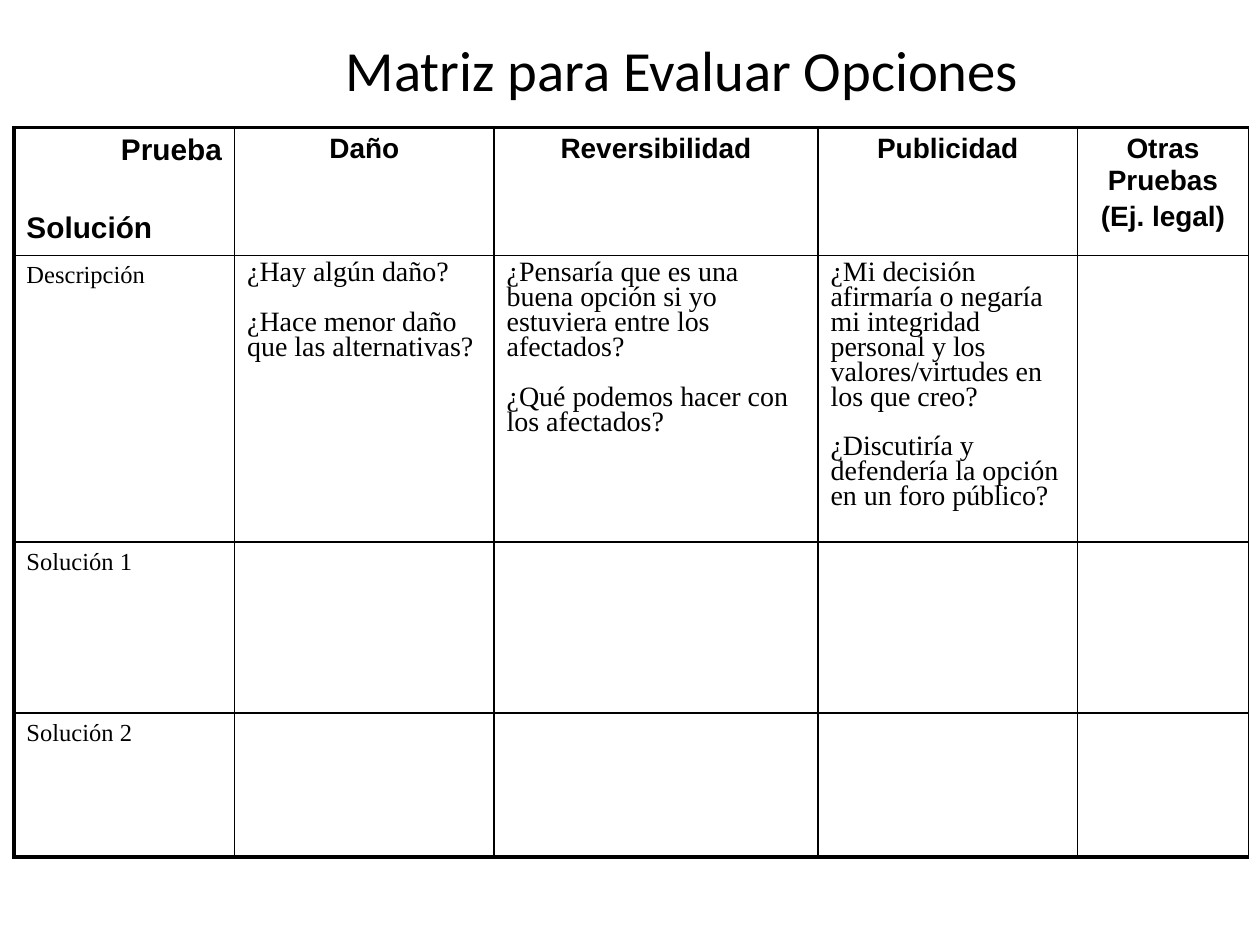
from dataclasses import dataclass

from lxml.etree import SubElement
from pptx import Presentation
from pptx.dml.color import RGBColor
from pptx.enum.text import MSO_ANCHOR as Anchor, PP_ALIGN as Align
from pptx.oxml.ns import qn
from pptx.util import Cm, Pt


@dataclass(frozen=True)
class Theme:
    ink: str = "000000"
    title_font: str = "Calibri"
    head_font: str = "Arial"
    body_font: str = "Times New Roman"
    title_size: float = 32.4
    corner_size: float = 17
    text_size: float = 16
    label_size: float = 14
    thin: float = 1
    thick: float = 2.25


theme = Theme()


def write(frame, lines, *, font, size, bold=False, aligns=(Align.LEFT,), gap=0, leading=None):
    """Write one paragraph per line; gap is the space between them in points."""
    for index, line in enumerate(lines):
        para = frame.paragraphs[0] if index == 0 else frame.add_paragraph()
        para.alignment = aligns[index % len(aligns)]
        para.space_before = Pt(gap if index else 0)
        if leading:
            para.line_spacing = leading
        span = para.add_run()
        span.text = line
        span.font.name = font
        span.font.size = Pt(size)
        span.font.bold = bold
        span.font.color.rgb = RGBColor.from_string(theme.ink)


def add_border(cell, side, width):
    properties = cell._tc.get_or_add_tcPr()
    line = SubElement(properties, qn(f"a:ln{side}"), w=str(Pt(width)))
    fill = SubElement(line, qn("a:solidFill"))
    SubElement(fill, qn("a:srgbClr"), val=theme.ink)


deck = Presentation()
deck.slide_width, deck.slide_height = Cm(25.4), Cm(19.05)
page = deck.slides.add_slide(deck.slide_layouts[6])

# Title
box = page.shapes.add_textbox(Cm(3.4), Cm(0.43), Cm(20.7), Cm(1.7))
box.text_frame.word_wrap = True
box.text_frame.vertical_anchor = Anchor.BOTTOM
box.text_frame.margin_bottom = Cm(0.05)
write(box.text_frame, ["Matriz para Evaluar Opciones"], font=theme.title_font,
      size=theme.title_size, aligns=(Align.CENTER,))

# Evaluation matrix
column_widths = [4.45, 5.23, 6.53, 5.23, 3.45]
row_heights = [2.52, 5.78, 3.45, 2.9]
last_row = len(row_heights) - 1
matrix = page.shapes.add_table(
    len(row_heights), len(column_widths), Cm(0.28), Cm(2.57),
    Cm(sum(column_widths)), Cm(sum(row_heights))).table
matrix.first_row = matrix.horz_banding = False
for column, width in zip(matrix.columns, column_widths):
    column.width = Cm(width)
for row, height in zip(matrix.rows, row_heights):
    row.height = Cm(height)

for row_index, row in enumerate(matrix.rows):
    for column_index, cell in enumerate(row.cells):
        outer_sides = {"L": column_index == 0, "R": False,
                       "T": row_index == 0, "B": row_index == last_row}
        for side, is_outer in outer_sides.items():
            add_border(cell, side, theme.thick if is_outer else theme.thin)
        cell.fill.background()

# Headings
write(matrix.cell(0, 0).text_frame, ["Prueba", "Solución"], font=theme.head_font,
      size=theme.corner_size, bold=True, aligns=(Align.RIGHT, Align.LEFT), gap=25)
tests = [["Daño"], ["Reversibilidad"], ["Publicidad"], ["Otras Pruebas", "(Ej. legal)"]]
for column_index, lines in enumerate(tests, start=1):
    write(matrix.cell(0, column_index).text_frame, lines, font=theme.head_font,
          size=theme.text_size, bold=True, aligns=(Align.CENTER,), gap=3.2)

# Row labels
for row_index, label in enumerate(["Descripción", "Solución 1", "Solución 2"], start=1):
    write(matrix.cell(row_index, 0).text_frame, [label],
          font=theme.body_font, size=theme.label_size)

# Questions for each test
questions = [
    ["¿Hay algún daño?",
     "¿Hace menor daño que las alternativas?"],
    ["¿Pensaría que es una buena opción si yo estuviera entre los afectados?",
     "¿Qué podemos hacer con los afectados?"],
    ["¿Mi decisión afirmaría o negaría mi integridad personal y los valores/virtudes en los que creo?",
     "¿Discutiría y defendería la opción en un foro público?"],
]
for column_index, lines in enumerate(questions, start=1):
    write(matrix.cell(1, column_index).text_frame, lines, font=theme.body_font,
          size=theme.text_size, gap=14.3, leading=0.8)

deck.save("out.pptx")
